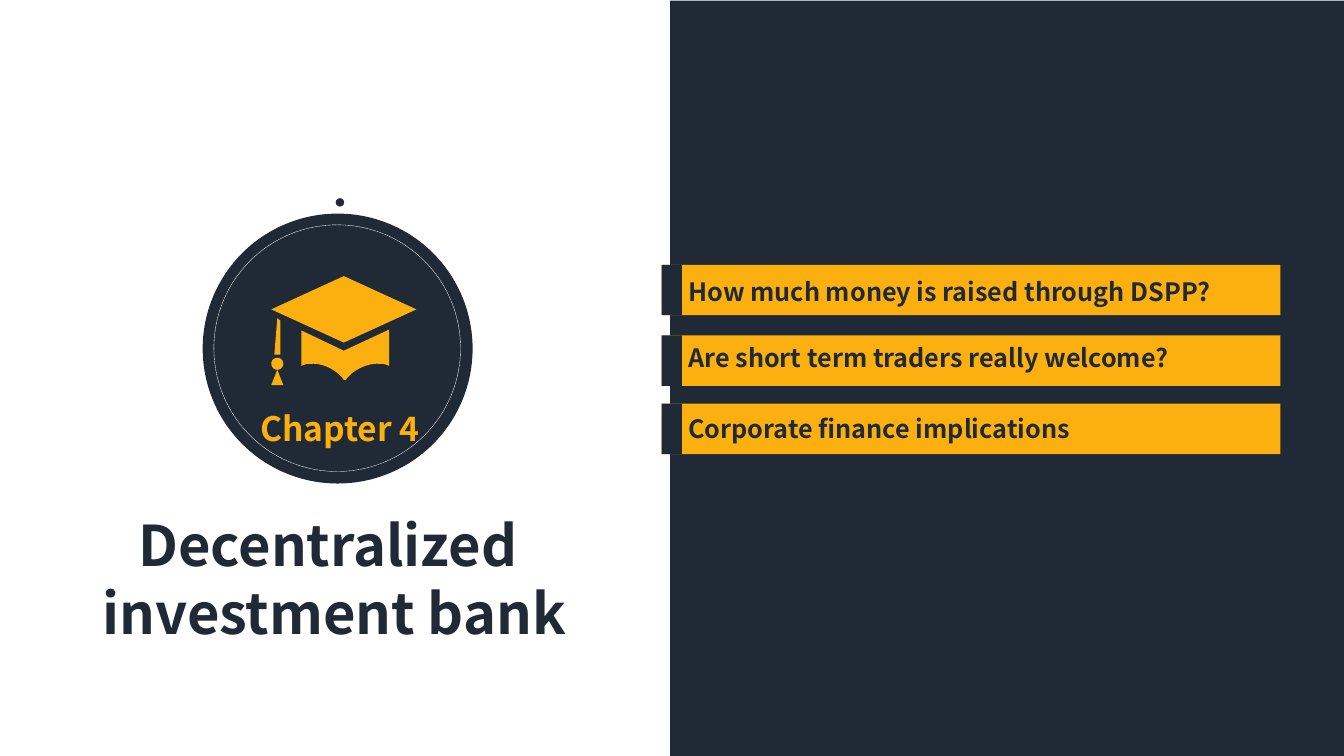
from math import cos, pi, sin

from pptx import Presentation
from pptx.dml.color import RGBColor
from pptx.enum.dml import MSO_LINE as Dash
from pptx.enum.shapes import MSO_SHAPE as Kind
from pptx.enum.text import MSO_ANCHOR as Anchor, MSO_AUTO_SIZE as Fit, PP_ALIGN as Align
from pptx.util import Pt

NAVY, GOLD, WHITE = "202A36", "FCB00F", "FFFFFF"
FONT = "Noto Sans CJK SC"
UNIT = 100  # freeform steps per point

# Label, bar top and label top, measured from the list top
ROWS = [
    ("How much money is raised through DSPP?", 0, 4.3),
    ("Are short term traders really welcome?", 50.4, 51.8),
    ("Corporate finance implications", 99.2, 102.2),
]


def tint(code):
    return RGBColor.from_string(code)


def paint(shape, fill):
    shape.shadow.inherit = False
    shape.line.fill.background()
    if fill:
        shape.fill.solid()
        shape.fill.fore_color.rgb = tint(fill)
    else:
        shape.fill.background()
    return shape


def draw(slide, kind, x, y, w, h, fill=None):
    return paint(slide.shapes.add_shape(kind, Pt(x), Pt(y), Pt(w), Pt(h)), fill)


def write(box, lines, size, color, align=Align.LEFT, anchor=Anchor.TOP, wrap=False):
    frame = box.text_frame
    frame.text = "\n".join(lines)
    frame.word_wrap = wrap
    frame.auto_size = Fit.NONE
    frame.vertical_anchor = anchor
    for para in frame.paragraphs:
        para.alignment = align
        font = para.runs[0].font
        font.name, font.size, font.bold = FONT, Pt(size), True
        font.color.rgb = tint(color)


def curve(a, b, c, d, steps=12):
    """Points on a cubic curve from a to d."""
    spots = []
    for i in range(steps + 1):
        t = i / steps
        u = 1 - t
        spots.append(tuple(
            u**3 * p + 3 * u * u * t * q + 3 * u * t * t * r + t**3 * s
            for p, q, r, s in zip(a, b, c, d)))
    return spots


def add_cap(slide, x, y):
    board = [(51.8, 0), (0, 23.8), (51.8, 47.5), (103.7, 23.8)]
    left = curve((30.2, 62.6), (38.9, 62.6), (49, 69.1), (51.8, 74.2))
    right = curve((53.3, 74.2), (56.2, 69.1), (66.2, 62.6), (75.6, 62.6))
    base = [(21.6, 64.1), (25, 62.8), *left, *right, (80.5, 62.8),
            (84.2, 64.1), (84.2, 38.2), (51.8, 53.3), (21.6, 38.9)]
    cord = [(4.3, 30.2), (2.2, 56.2), (6.5, 56.2), (6.5, 31.7)]
    bead = [(4.3 + 4.3 * cos(i * pi / 12), 62.6 + 4.3 * sin(i * pi / 12))
            for i in range(24)]
    tassel = [(4.3, 66.9), (0, 77.8), (8.6, 77.8)]

    pen = None
    for part in (base, board, cord, bead, tassel):
        spots = [((x + px) * UNIT, (y + py) * UNIT) for px, py in part]
        if pen is None:
            pen = slide.shapes.build_freeform(*spots[0], scale=Pt(1) / UNIT)
        else:
            pen.move_to(*spots[0])
        pen.add_line_segments(spots[1:], close=True)
    paint(pen.convert_to_shape(), GOLD)


def add_badge(slide, x, y, size):
    # Disc, top dot and dotted ring
    draw(slide, Kind.OVAL, x, y, size, size, NAVY)
    draw(slide, Kind.OVAL, x + 95, y - 11, 6, 6, NAVY)
    ring = draw(slide, Kind.OVAL, x + 8, y + 8, size - 16.6, size - 16.6)
    ring.line.color.rgb = tint(WHITE)
    ring.line.width = Pt(0.25)
    ring.line.dash_style = Dash.SQUARE_DOT

    # Cap and chapter number
    add_cap(slide, x + 49, y + 44.6)
    label = slide.shapes.add_textbox(Pt(x + 4.3), Pt(y + 134.6), Pt(187.2), Pt(37.4))
    write(label, ["Chapter 4"], 24, GOLD, Align.CENTER, Anchor.MIDDLE, True)


def add_title(slide, x, y, w, h):
    title = slide.shapes.title
    title.left, title.top, title.width, title.height = Pt(x), Pt(y), Pt(w), Pt(h)
    write(title, ["Decentralized ", "investment bank"], 40, NAVY, Align.CENTER)


def add_list(slide, x, y, w):
    for text, bar, label in ROWS:
        draw(slide, Kind.RECTANGLE, x, y + bar, w, 36, GOLD)
        draw(slide, Kind.RECTANGLE, x, y + bar, 14.6, 36, NAVY)
        box = slide.shapes.add_textbox(Pt(x + 12.2), Pt(y + label), Pt(405), Pt(28.8))
        write(box, [text], 18, NAVY)


def main():
    deck = Presentation()
    deck.slide_width, deck.slide_height = Pt(960), Pt(540)
    slide = deck.slides.add_slide(deck.slide_layouts[5])

    # Right panel with the questions
    draw(slide, Kind.RECTANGLE, 478.6, 0.5, 481.4, 539.5, NAVY)
    add_list(slide, 472.5, 189.2, 442)

    # Left side with badge and title
    add_badge(slide, 144.8, 152.6, 192.8)
    add_title(slide, 62, 361.4, 353.5, 152.6)
    deck.save("out.pptx")


if __name__ == "__main__":
    main()
